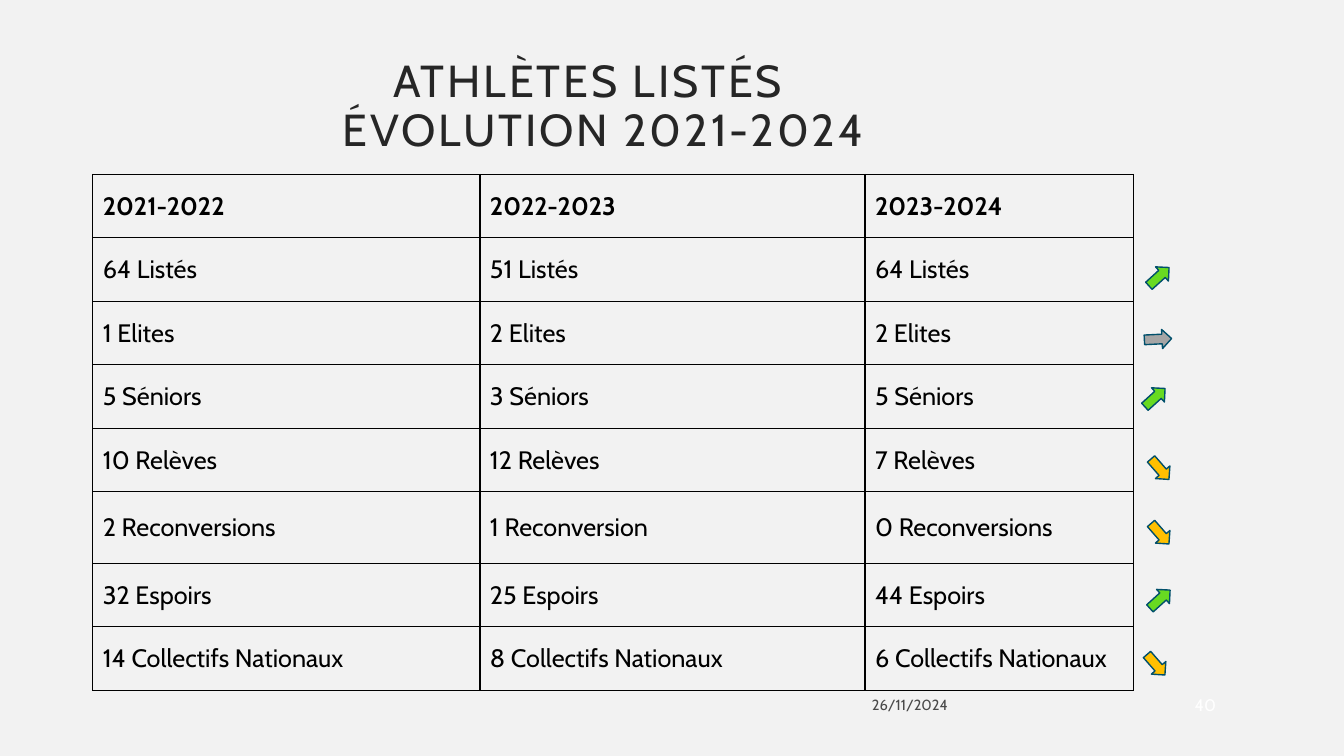
from dataclasses import dataclass
from enum import Enum

import pptx
import pptx.dml.color
import pptx.enum.shapes
import pptx.enum.text
import pptx.oxml
import pptx.oxml.ns
import pptx.slide
import pptx.table
import pptx.text.text
import pptx.util
from pptx.dml.color import RGBColor
from pptx.util import Inches

FONT = "Cabin"
BACKGROUND = RGBColor(0xF2, 0xF2, 0xF2)
TITLE_INK = RGBColor(0x26, 0x26, 0x26)
BLACK = RGBColor(0x00, 0x00, 0x00)
DATE_GREY = RGBColor(0x49, 0x49, 0x49)
WHITE = RGBColor(0xFF, 0xFF, 0xFF)
ARROW_LINE = RGBColor(0x00, 0x4F, 0x6B)
GREEN = RGBColor(0x68, 0xDA, 0x21)
GREY = RGBColor(0xA5, 0xA5, 0xA5)
AMBER = RGBColor(0xFF, 0xC0, 0x00)

TABLE_LEFT, TABLE_TOP = 0.92, 1.73
COLUMN_WIDTHS = [3.84, 3.82, 2.66]
ROW_HEIGHTS = [0.63, 0.63, 0.63, 0.63, 0.63, 0.71, 0.63, 0.63]
ARROW_WIDTH, ARROW_HEIGHT = 0.19, 0.27


class Trend(Enum):
    UP = (47.8, GREEN)
    STEADY = (87.1, GREY)
    DOWN = (138.9, AMBER)


@dataclass(frozen=True)
class TextBox:
    text: str
    left: float
    top: float
    width: float
    height: float
    size: float
    color: RGBColor
    align: pptx.enum.text.PP_ALIGN = pptx.enum.text.PP_ALIGN.LEFT


@dataclass(frozen=True)
class TrendArrow:
    trend: Trend
    left: float
    top: float


TITLE = TextBox("ATHLÈTES LISTÉS\vÉVOLUTION 2021-2024", 0.92, 0.4, 10.8, 1.33, 32, TITLE_INK)
DATE = TextBox("26/11/2024", 8.55, 6.82, 3.01, 0.35, 10.5, DATE_GREY)
PAGE_NUMBER = TextBox("40", 11.16, 6.82, 1, 0.35, 12, WHITE, pptx.enum.text.PP_ALIGN.RIGHT)

ATHLETES = [
    ("2021-2022", "2022-2023", "2023-2024"),
    ("64 Listés", "51 Listés", "64 Listés"),
    ("1 Elites", "2 Elites", "2 Elites"),
    ("5 Séniors", "3 Séniors", "5 Séniors"),
    ("10 Relèves", "12 Relèves", "7 Relèves"),
    ("2 Reconversions", "1 Reconversion", "0 Reconversions"),
    ("32 Espoirs", "25 Espoirs", "44 Espoirs"),
    ("14 Collectifs Nationaux", "8 Collectifs Nationaux", "6 Collectifs Nationaux"),
]

ARROWS = [
    TrendArrow(Trend.UP, 11.4, 2.61),
    TrendArrow(Trend.STEADY, 11.39, 3.23),
    TrendArrow(Trend.UP, 11.36, 3.81),
    TrendArrow(Trend.DOWN, 11.41, 4.52),
    TrendArrow(Trend.DOWN, 11.41, 5.16),
    TrendArrow(Trend.UP, 11.41, 5.81),
    TrendArrow(Trend.DOWN, 11.37, 6.46),
]


def style_runs(para: pptx.text.text._Paragraph, size: float, color: RGBColor, bold: bool = False) -> None:
    for span in para.runs:
        span.font.name = FONT
        span.font.size = pptx.util.Pt(size)
        span.font.bold = bold
        span.font.color.rgb = color


def add_text(page: pptx.slide.Slide, item: TextBox) -> pptx.text.text._Paragraph:
    box = page.shapes.add_textbox(
        Inches(item.left), Inches(item.top), Inches(item.width), Inches(item.height)
    )
    frame = box.text_frame
    frame.word_wrap = True
    frame.vertical_anchor = pptx.enum.text.MSO_ANCHOR.MIDDLE
    frame.text = item.text
    para = frame.paragraphs[0]
    para.alignment = item.align
    style_runs(para, item.size, item.color)
    return para


def add_title(page: pptx.slide.Slide) -> None:
    para = add_text(page, TITLE)
    para.line_spacing = 0.9
    properties = para._p.get_or_add_pPr()
    properties.set("marL", str(Inches(2.38)))
    properties.set("indent", str(Inches(0.5)))
    for span in para.runs:
        span.font._element.set("spc", "200")


def add_borders(cell: pptx.table._Cell) -> None:
    properties = cell._tc.get_or_add_tcPr()
    for index, side in enumerate(("lnL", "lnR", "lnT", "lnB")):
        border = pptx.oxml.parse_xml(
            f'<a:{side} {pptx.oxml.ns.nsdecls("a")} w="{pptx.util.Pt(1)}">'
            f'<a:solidFill><a:srgbClr val="{BLACK}"/></a:solidFill></a:{side}>'
        )
        properties.insert(index, border)


def add_athlete_table(page: pptx.slide.Slide) -> None:
    table = page.shapes.add_table(
        len(ROW_HEIGHTS), len(COLUMN_WIDTHS), Inches(TABLE_LEFT), Inches(TABLE_TOP),
        Inches(sum(COLUMN_WIDTHS)), Inches(sum(ROW_HEIGHTS)),
    ).table
    table.first_row = False
    table.horz_banding = False
    for column, width in zip(table.columns, COLUMN_WIDTHS):
        column.width = Inches(width)
    for row, height in zip(table.rows, ROW_HEIGHTS):
        row.height = Inches(height)
    for row_index, texts in enumerate(ATHLETES):
        for column_index, text in enumerate(texts):
            cell = table.cell(row_index, column_index)
            cell.text_frame.text = text
            cell.vertical_anchor = pptx.enum.text.MSO_ANCHOR.MIDDLE
            cell.fill.background()
            add_borders(cell)
            style_runs(cell.text_frame.paragraphs[0], 18, BLACK, bold=row_index == 0)


def add_arrow(page: pptx.slide.Slide, arrow: TrendArrow) -> None:
    rotation, color = arrow.trend.value
    shape = page.shapes.add_shape(
        pptx.enum.shapes.MSO_SHAPE.UP_ARROW,
        Inches(arrow.left), Inches(arrow.top), Inches(ARROW_WIDTH), Inches(ARROW_HEIGHT),
    )
    shape.rotation = rotation
    shape.shadow.inherit = False
    shape.fill.solid()
    shape.fill.fore_color.rgb = color
    shape.line.color.rgb = ARROW_LINE
    shape.line.width = pptx.util.Pt(1)


def main() -> None:
    deck = pptx.Presentation()
    deck.slide_width = Inches(13.33)
    deck.slide_height = Inches(7.5)
    page = deck.slides.add_slide(deck.slide_layouts[6])
    page.background.fill.solid()
    page.background.fill.fore_color.rgb = BACKGROUND
    add_title(page)
    add_text(page, DATE)
    add_text(page, PAGE_NUMBER)
    add_athlete_table(page)
    for arrow in ARROWS:
        add_arrow(page, arrow)
    deck.save("out.pptx")


if __name__ == "__main__":
    main()
